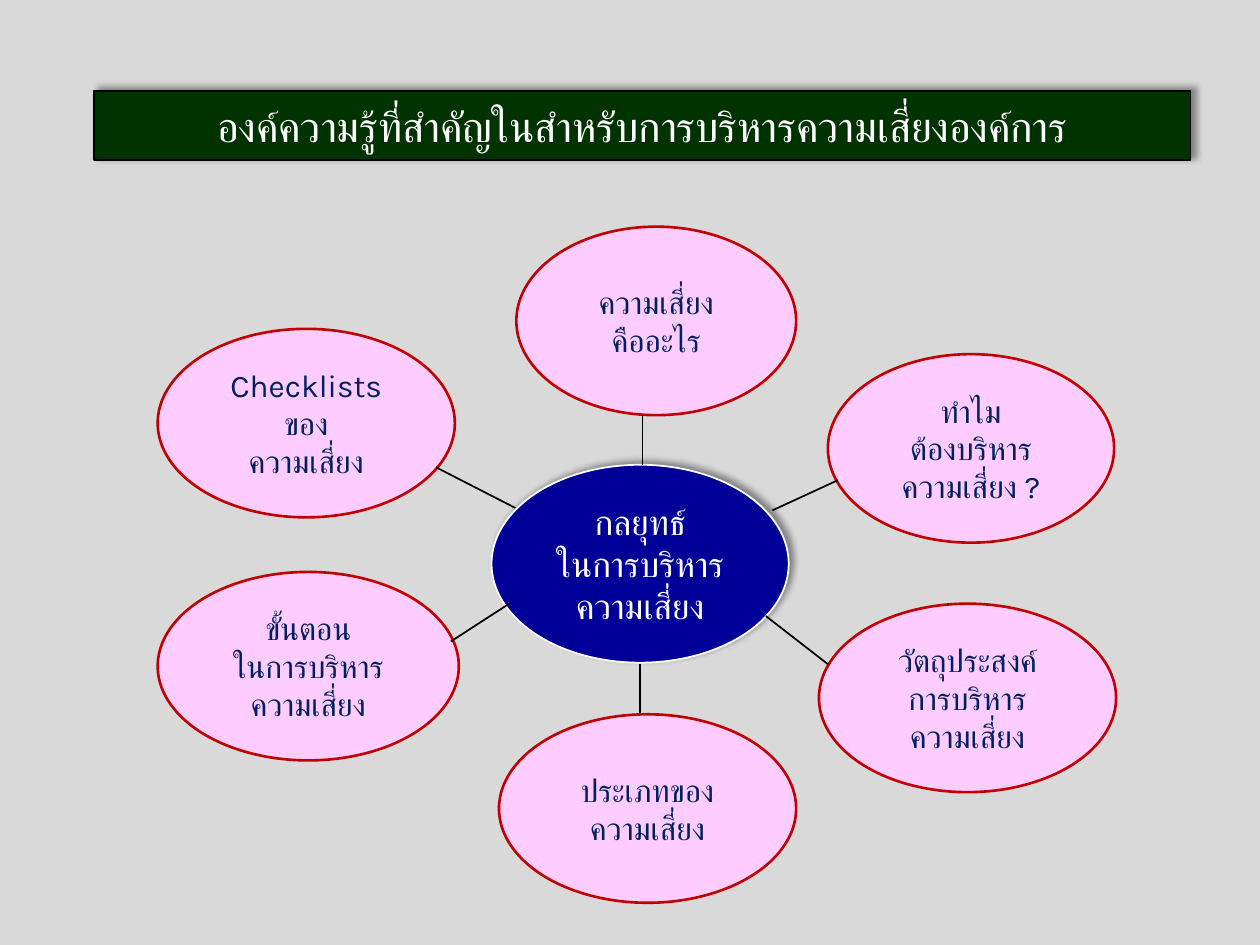
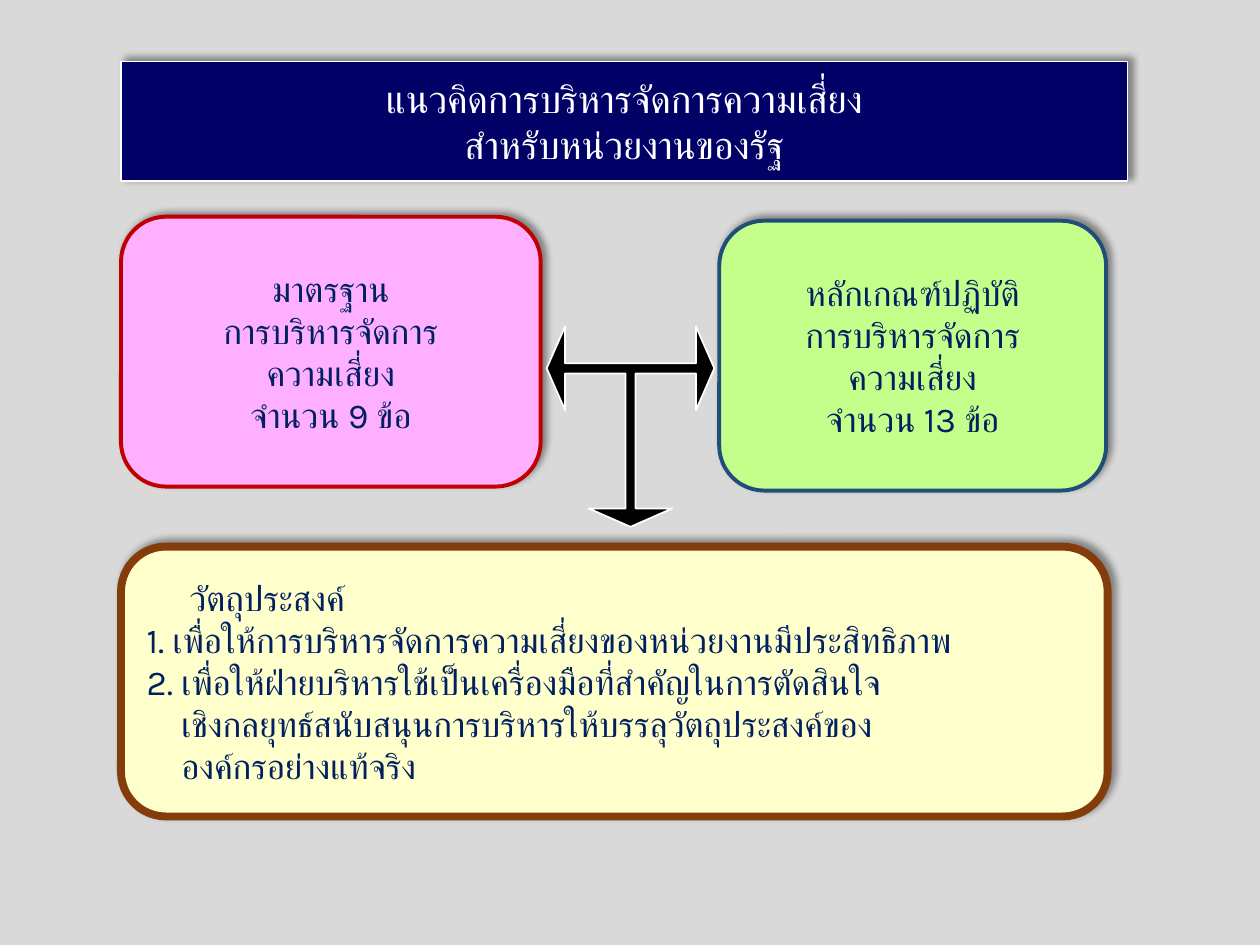
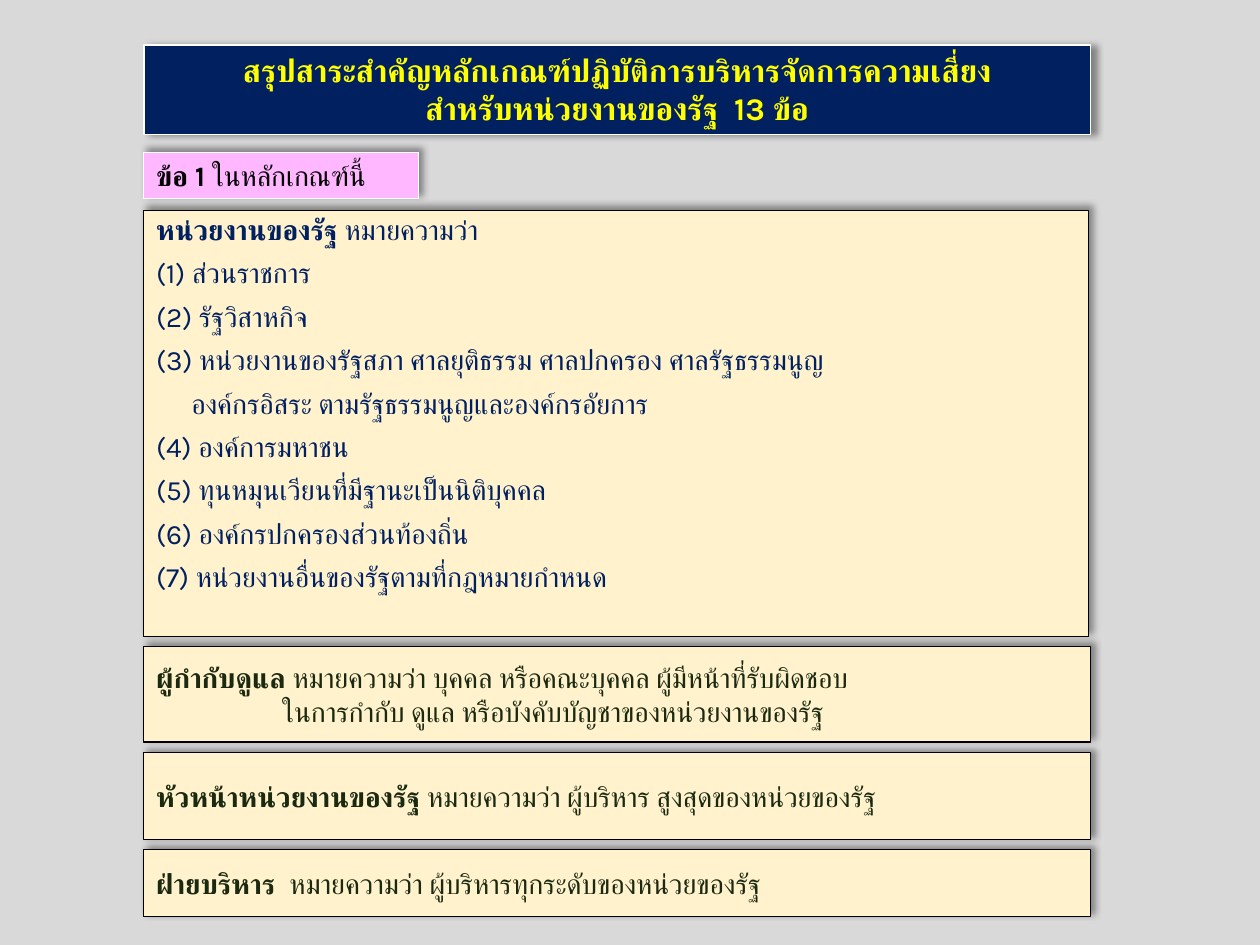
"""Builds three slides on risk management for public agencies."""
from lxml.etree import SubElement
from pptx import Presentation
from pptx.dml.color import RGBColor
from pptx.enum.shapes import MSO_CONNECTOR, MSO_SHAPE
from pptx.enum.text import MSO_ANCHOR as Anchor, MSO_AUTO_SIZE, PP_ALIGN as Align
from pptx.oxml.ns import qn
from pptx.util import Cm, Pt

GRAY = RGBColor(0xD9, 0xD9, 0xD9)
BLACK = RGBColor(0x00, 0x00, 0x00)
WHITE = RGBColor(0xFF, 0xFF, 0xFF)
NAVY = RGBColor(0x00, 0x20, 0x60)
HUB_BLUE = RGBColor(0x00, 0x00, 0x99)
DEEP_BLUE = RGBColor(0x00, 0x00, 0x66)
STEEL_BLUE = RGBColor(0x1F, 0x4E, 0x79)
DARK_GREEN = RGBColor(0x00, 0x33, 0x00)
TEXT_GREEN = RGBColor(0x1B, 0x29, 0x11)
LIME = RGBColor(0xC5, 0xFF, 0x8B)
RED = RGBColor(0xC0, 0x00, 0x00)
TOPIC_PINK = RGBColor(0xFF, 0xCC, 0xFF)
STANDARD_PINK = RGBColor(0xFF, 0xAF, 0xFF)
LABEL_PINK = RGBColor(0xFF, 0xB7, 0xFF)
YELLOW = RGBColor(0xFF, 0xFF, 0x00)
PALE_YELLOW = RGBColor(0xFF, 0xFF, 0xCC)
CREAM = RGBColor(0xFF, 0xF2, 0xCC)
BROWN = RGBColor(0x84, 0x3C, 0x0B)
FONT = "Karla"


def write(shape, lines, lead="", size=18, color=NAVY, bold=False, align=Align.CENTER,
          anchor=Anchor.MIDDLE, indents=None, line_spacing=1.0, space_before=0):
    frame = shape.text_frame
    frame.word_wrap = True
    frame.auto_size = MSO_AUTO_SIZE.NONE
    frame.vertical_anchor = anchor
    for index, line in enumerate(lines):
        paragraph = frame.add_paragraph() if index else frame.paragraphs[0]
        paragraph.alignment = align
        paragraph.line_spacing = line_spacing
        paragraph.space_before = Pt(space_before)
        if indents and index in indents:
            properties = paragraph._p.get_or_add_pPr()
            properties.set("marL", str(Cm(indents[index])))
            properties.set("indent", "0")
        pieces = [(lead, True)] if lead and index == 0 else []
        for text, is_bold in pieces + [(line, bold)]:
            run = paragraph.add_run()
            run.text = text
            run.font.name = FONT
            run.font.size = Pt(size)
            run.font.bold = is_bold
            run.font.color.rgb = color
            SubElement(run._r.get_or_add_rPr(), qn("a:cs"), typeface=FONT)


class Deck:
    def __init__(self):
        self.presentation = Presentation()
        self.presentation.slide_width = Cm(25.4)
        self.presentation.slide_height = Cm(19.05)
        background = self.presentation.slide_master.background.fill
        background.solid()
        background.fore_color.rgb = GRAY
        self.slide = None

    def new_slide(self):
        self.slide = self.presentation.slides.add_slide(self.presentation.slide_layouts[5])

    def paint(self, shape, fill, line, width, shadow, direction=315):
        shape.fill.solid()
        shape.fill.fore_color.rgb = fill
        shape.line.color.rgb = line
        shape.line.width = Pt(width)
        shape.shadow.inherit = False
        if shadow:
            effects = shape._element.spPr.find(qn("a:effectLst"))
            outer = SubElement(effects, qn("a:outerShdw"), blurRad=str(Pt(4)), dist=str(Pt(3)),
                               dir=str(direction * 60000), algn="bl", rotWithShape="0")
            tint = SubElement(outer, qn("a:srgbClr"), val=str(BLACK))
            SubElement(tint, qn("a:alpha"), val="40000")

    def title(self, lines, box, geometry, fill, line=WHITE, width=1, direction=315, **text_format):
        shape = self.slide.shapes.title
        shape.left, shape.top, shape.width, shape.height = map(Cm, box)
        preset = SubElement(shape._element.spPr, qn("a:prstGeom"), prst=geometry)
        SubElement(preset, qn("a:avLst"))
        self.paint(shape, fill, line, width, True, direction)
        write(shape, lines, **text_format)

    def shape(self, kind, box, fill, line, width=1.0, lines=(), shadow=True, **text_format):
        shape = self.slide.shapes.add_shape(kind, *map(Cm, box))
        self.paint(shape, fill, line, width, shadow)
        write(shape, lines, **text_format)
        return shape

    def spoke(self, *ends):
        connector = self.slide.shapes.add_connector(MSO_CONNECTOR.STRAIGHT, *map(Cm, ends))
        connector.line.color.rgb = BLACK
        connector.line.width = Pt(1)
        SubElement(connector._element.spPr, qn("a:effectLst"))


def build_topics(deck):
    deck.new_slide()
    deck.title(["องค์ความรู้ที่สำคัญในสำหรับการบริหารความเสี่ยงองค์การ"], (1.9, 1.83, 22.1, 1.4),
               "roundRect", DARK_GREEN, line=BLACK, size=24, color=WHITE)
    deck.shape(MSO_SHAPE.OVAL, (9.91, 9.37, 5.99, 3.99), HUB_BLUE, WHITE,
               lines=["กลยุทธ์", "ในการบริหารความเสี่ยง"], size=20, color=WHITE)
    topics = [
        (16.69, 7.14, 5.77, ["ทำไม", "ต้องบริหาร", "ความเสี่ยง ?"]),
        (10.41, 4.57, 5.64, ["ความเสี่ยง", "คืออะไร"]),
        (16.51, 12.17, 5.99, ["วัตถุประสงค์", "การบริหาร", "ความเสี่ยง"]),
        (10.06, 14.4, 5.99, ["ประเภทของ", "ความเสี่ยง"]),
        (3.18, 11.53, 6.07, ["ขั้นตอน", "ในการบริหาร", "ความเสี่ยง"]),
        (3.18, 6.63, 5.99, ["Checklists", "ของ", "ความเสี่ยง"]),
    ]
    for left, top, width, lines in topics:
        deck.shape(MSO_SHAPE.OVAL, (left, top, width, 3.8), TOPIC_PINK, RED, 1.5, lines,
                   shadow=False)
    spokes = [
        (8.79, 9.42, 10.39, 10.24), (9.09, 12.93, 10.31, 12.14), (12.9, 14.38, 12.9, 13.39),
        (15.57, 10.29, 16.89, 9.68), (15.44, 12.42, 16.69, 13.39), (12.95, 9.37, 12.95, 8.36),
    ]
    for ends in spokes:
        deck.spoke(*ends)


def build_concept(deck):
    deck.new_slide()
    deck.title(["แนวคิดการบริหารจัดการความเสี่ยง", "สำหรับหน่วยงานของรัฐ"],
               (2.44, 1.24, 20.29, 2.41), "ellipse", DEEP_BLUE, size=22, color=WHITE)
    shared = ["การบริหารจัดการ", "ความเสี่ยง"]
    panels = [
        ((14.5, 4.45, 7.8, 5.44), LIME, STEEL_BLUE, ["หลักเกณฑ์ปฏิบัติ", *shared, "จำนวน 13 ข้อ"]),
        ((2.44, 4.37, 8.46, 5.44), STANDARD_PINK, RED, ["มาตรฐาน", *shared, "จำนวน 9 ข้อ"]),
    ]
    for box, fill, line, lines in panels:
        deck.shape(MSO_SHAPE.ROUNDED_RECTANGLE, box, fill, line, 2.25, lines, size=20)
    objectives = [
        "วัตถุประสงค์",
        "1. เพื่อให้การบริหารจัดการความเสี่ยงของหน่วยงานมีประสิทธิภาพ",
        "2. เพื่อให้ฝ่ายบริหารใช้เป็นเครื่องมือที่สำคัญในการตัดสินใจ",
        "เชิงกลยุทธ์สนับสนุนการบริหารให้บรรลุวัตถุประสงค์ของ",
        "องค์กรอย่างแท้จริง",
    ]
    deck.shape(MSO_SHAPE.ROUNDED_RECTANGLE, (2.44, 11.02, 19.89, 5.44), PALE_YELLOW, BROWN, 4.5,
               objectives, size=20, align=Align.LEFT, indents={0: 0.87, 3: 0.7, 4: 0.7})
    arrow = deck.shape(MSO_SHAPE.LEFT_RIGHT_UP_ARROW, (11.02, 6.58, 3.38, 4.04), BLACK, WHITE,
                       shadow=False)
    arrow.rotation = 180
    for index, value in enumerate((0.06, 0.25, 0.11)):
        arrow.adjustments[index] = value


def build_definitions(deck):
    deck.new_slide()
    deck.title(["สรุปสาระสำคัญหลักเกณฑ์ปฏิบัติการบริหารจัดการความเสี่ยง",
                "สำหรับหน่วยงานของรัฐ  13 ข้อ"], (2.9, 0.91, 19.08, 1.8), "rect", NAVY,
               width=0.75, direction=0, color=YELLOW, bold=True, anchor=Anchor.TOP)
    deck.shape(MSO_SHAPE.RECTANGLE, (2.9, 3.07, 5.54, 0.94), LABEL_PINK, WHITE, 0.75,
               ["ในหลักเกณฑ์นี้"], lead="ข้อ 1 ", size=16, color=BLACK, align=Align.LEFT,
               anchor=Anchor.TOP)
    agencies = [
        "หมายความว่า",
        "(1) ส่วนราชการ",
        "(2) รัฐวิสาหกิจ",
        "(3) หน่วยงานของรัฐสภา ศาลยุติธรรม ศาลปกครอง ศาลรัฐธรรมนูญ",
        "องค์กรอิสระ ตามรัฐธรรมนูญและองค์กรอัยการ",
        "(4) องค์การมหาชน",
        "(5) ทุนหมุนเวียนที่มีฐานะเป็นนิติบุคคล",
        "(6) องค์กรปกครองส่วนท้องถิ่น",
        "(7) หน่วยงานอื่นของรัฐตามที่กฎหมายกำหนด",
    ]
    deck.shape(MSO_SHAPE.RECTANGLE, (2.9, 4.24, 19.05, 8.59), CREAM, BLACK, 0.75, agencies,
               lead="หน่วยงานของรัฐ ", size=16, align=Align.LEFT, anchor=Anchor.TOP,
               indents={4: 0.71}, line_spacing=0.9, space_before=7.5)
    definitions = [
        (1.93, "ผู้กำกับดูแล ", ["หมายความว่า บุคคล หรือคณะบุคคล ผู้มีหน้าที่รับผิดชอบ",
                               "ในการกำกับ ดูแล หรือบังคับบัญชาของหน่วยงานของรัฐ"]),
        (1.75, "หัวหน้าหน่วยงานของรัฐ ", ["หมายความว่า ผู้บริหาร สูงสุดของหน่วยของรัฐ"]),
        (1.35, "ฝ่ายบริหาร  ", ["หมายความว่า ผู้บริหารทุกระดับของหน่วยของรัฐ"]),
    ]
    top, gap = 13.03, 0.21
    for height, term, lines in definitions:
        deck.shape(MSO_SHAPE.RECTANGLE, (2.9, top, 19.08, height), CREAM, BLACK, 0.75, lines,
                   lead=term, size=16, color=TEXT_GREEN, align=Align.LEFT, indents={1: 2.54})
        top += height + gap


def main():
    deck = Deck()
    build_topics(deck)
    build_concept(deck)
    build_definitions(deck)
    deck.presentation.save("out.pptx")


if __name__ == "__main__":
    main()
